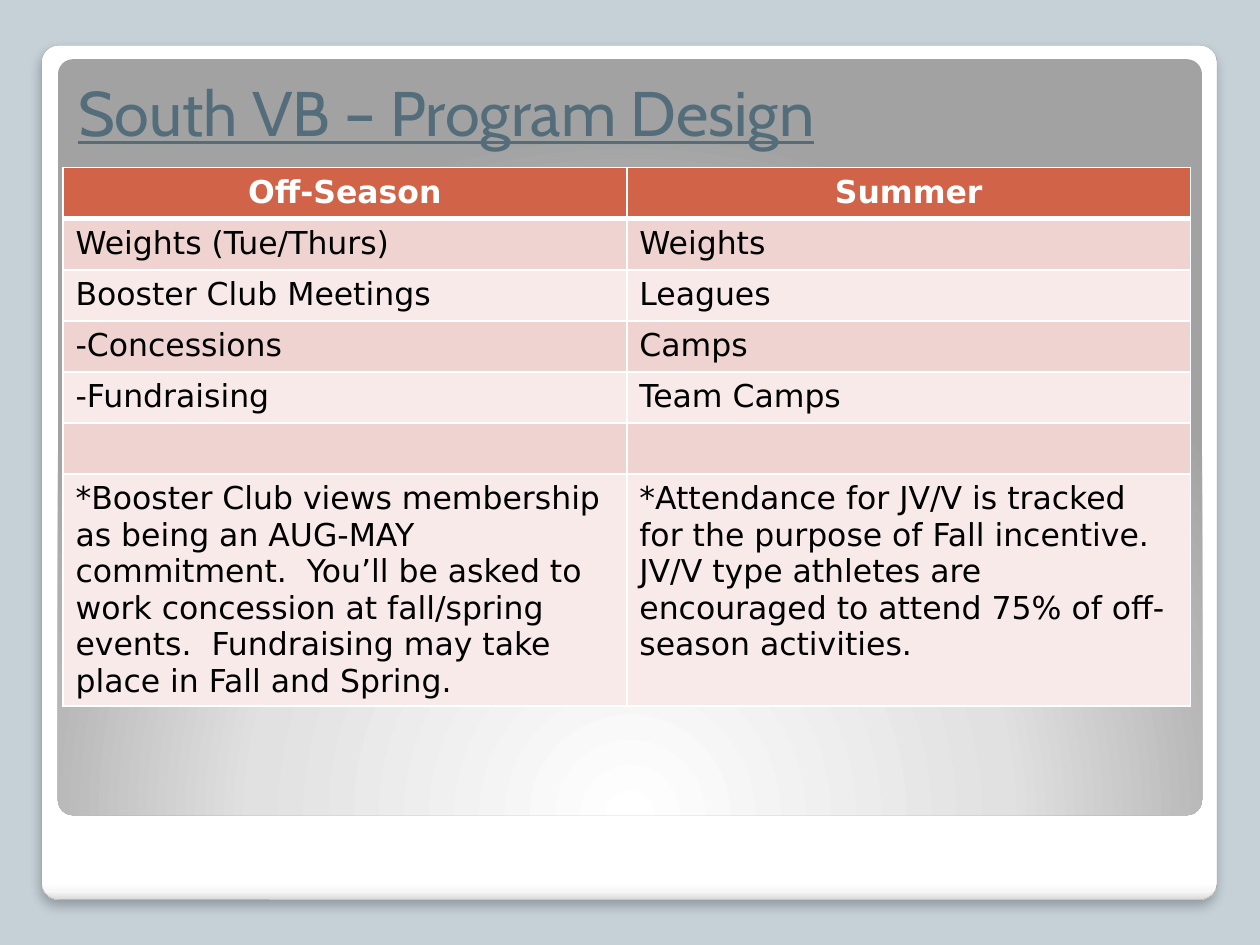
import pptx
import pptx.util
import pptx.dml.color
import pptx.enum.shapes
import pptx.enum.text
import pptx.oxml
import pptx.oxml.ns

Inches = pptx.util.Inches
Pt = pptx.util.Pt
RGBColor = pptx.dml.color.RGBColor
PP_ALIGN = pptx.enum.text.PP_ALIGN

BACKGROUND = RGBColor(0xC5, 0xD1, 0xD7)
FRAME_LINE = RGBColor(0xA4, 0xA4, 0xA4)
TITLE_COLOR = RGBColor(0x54, 0x6D, 0x7A)
WHITE = RGBColor(0xFF, 0xFF, 0xFF)
BLACK = RGBColor(0, 0, 0)
HEADER_FILL = RGBColor(0xD1, 0x63, 0x49)
BAND_FILLS = (RGBColor(0xF7, 0xEA, 0xE9), RGBColor(0xEE, 0xD3, 0xD0))

FRAME_STOPS = ((0, "FFFFFF"), (98, "FFFFFF"), (99, "F7F7F7"), (100, "DADADA"))
PANEL_STOPS = ((0, "FFFFFF"), (55, "E1E1E1"), (100, "A2A2A2"))
LINEAR_DOWN = '<a:lin ang="5400000" scaled="0"/>'
CIRCLE_BELOW = ('<a:path path="circle"><a:fillToRect l="50000" t="175000" '
                'r="50000" b="-75000"/></a:path>')

ROWS = [
    ("Off-Season", "Summer"),
    ("Weights (Tue/Thurs)", "Weights"),
    ("Booster Club Meetings", "Leagues"),
    ("-Concessions", "Camps"),
    ("-Fundraising", "Team Camps"),
    ("", ""),
    ("*Booster Club views membership as being an AUG-MAY commitment.  "
     "You’ll be asked to work concession at fall/spring events.  "
     "Fundraising may take place in Fall and Spring.",
     "*Attendance for JV/V is tracked for the purpose of Fall incentive.  "
     "JV/V type athletes are encouraged to attend 75% of off-season activities."),
]


def parse_element(tag, body, attrs=""):
    ns = pptx.oxml.ns.nsdecls("a")
    return pptx.oxml.parse_xml(f"<a:{tag} {ns} {attrs}>{body}</a:{tag}>")


def add_panel(s, left, top, width, height, stops, direction):
    sp = s.shapes.add_shape(pptx.enum.shapes.MSO_SHAPE.ROUNDED_RECTANGLE,
                            Inches(left), Inches(top), Inches(width), Inches(height))
    sp.adjustments[0] = 0.02
    sp.shadow.inherit = False
    sp.line.fill.background()
    gs = "".join(f'<a:gs pos="{pos * 1000}"><a:srgbClr val="{color}"/></a:gs>'
                 for pos, color in stops)
    gradient = parse_element("gradFill", f"<a:gsLst>{gs}</a:gsLst>{direction}",
                             'rotWithShape="1"')
    sp._element.spPr.find(pptx.oxml.ns.qn("a:prstGeom")).addnext(gradient)
    return sp


def add_frame(s):
    sp = add_panel(s, 0.33, 0.36, 9.33, 6.78, FRAME_STOPS, LINEAR_DOWN)
    sp.line.color.rgb = FRAME_LINE
    sp.line.width = Pt(0.16)
    effects = sp._element.spPr.find(pptx.oxml.ns.qn("a:effectLst"))
    effects.append(parse_element(
        "outerShdw", '<a:srgbClr val="000000"><a:alpha val="25000"/></a:srgbClr>',
        f'blurRad="{Pt(6)}" dist="{Pt(4)}" dir="5400000" algn="t" rotWithShape="0"'))


def format_title(s):
    title = s.shapes.title
    s.shapes._spTree.append(title._element)
    title.left, title.top = Inches(0.52), Inches(0.5)
    title.width, title.height = Inches(8.95), Inches(0.73)
    tf = title.text_frame
    tf.text = "South VB – Program Design"
    tf.word_wrap = True
    tf.auto_size = pptx.enum.text.MSO_AUTO_SIZE.NONE
    tf.vertical_anchor = pptx.enum.text.MSO_ANCHOR.BOTTOM
    p = tf.paragraphs[0]
    p.alignment = PP_ALIGN.LEFT
    p.font.name = "Cabin"
    p.font.size = Pt(36)
    p.font.underline = True
    p.font.color.rgb = TITLE_COLOR


def set_borders(cell, widths):
    tc_pr = cell._tc.get_or_add_tcPr()
    for side, width in widths.items():
        tc_pr.append(parse_element(
            f"ln{side}", f'<a:solidFill><a:srgbClr val="{WHITE}"/></a:solidFill>',
            f'w="{Pt(width)}"'))


def format_cell(cell, text, row):
    header = row == 0
    set_borders(cell, {"L": 1, "R": 1, "T": 3 if row == 1 else 1,
                       "B": 3 if header else 1})
    cell.fill.solid()
    cell.fill.fore_color.rgb = HEADER_FILL if header else BAND_FILLS[row % 2]
    cell.text = text
    p = cell.text_frame.paragraphs[0]
    p.alignment = PP_ALIGN.CENTER if header else PP_ALIGN.LEFT
    p.font.name = "DejaVu Sans"
    p.font.size = Pt(18)
    p.font.bold = header
    p.font.color.rgb = WHITE if header else BLACK


def add_program_table(s):
    table = s.shapes.add_table(len(ROWS), 2, Inches(0.5), Inches(1.33),
                               Inches(8.95), Inches(2.84)).table
    for row, texts in enumerate(ROWS):
        for col, text in enumerate(texts):
            format_cell(table.cell(row, col), text, row)


def main():
    prs = pptx.Presentation()
    prs.slide_width, prs.slide_height = Inches(10), Inches(7.5)
    s = prs.slides.add_slide(prs.slide_layouts[5])
    s.background.fill.solid()
    s.background.fill.fore_color.rgb = BACKGROUND
    add_frame(s)
    add_panel(s, 0.46, 0.47, 9.08, 6, PANEL_STOPS, CIRCLE_BELOW)
    format_title(s)
    add_program_table(s)
    prs.save("out.pptx")


if __name__ == "__main__":
    main()
